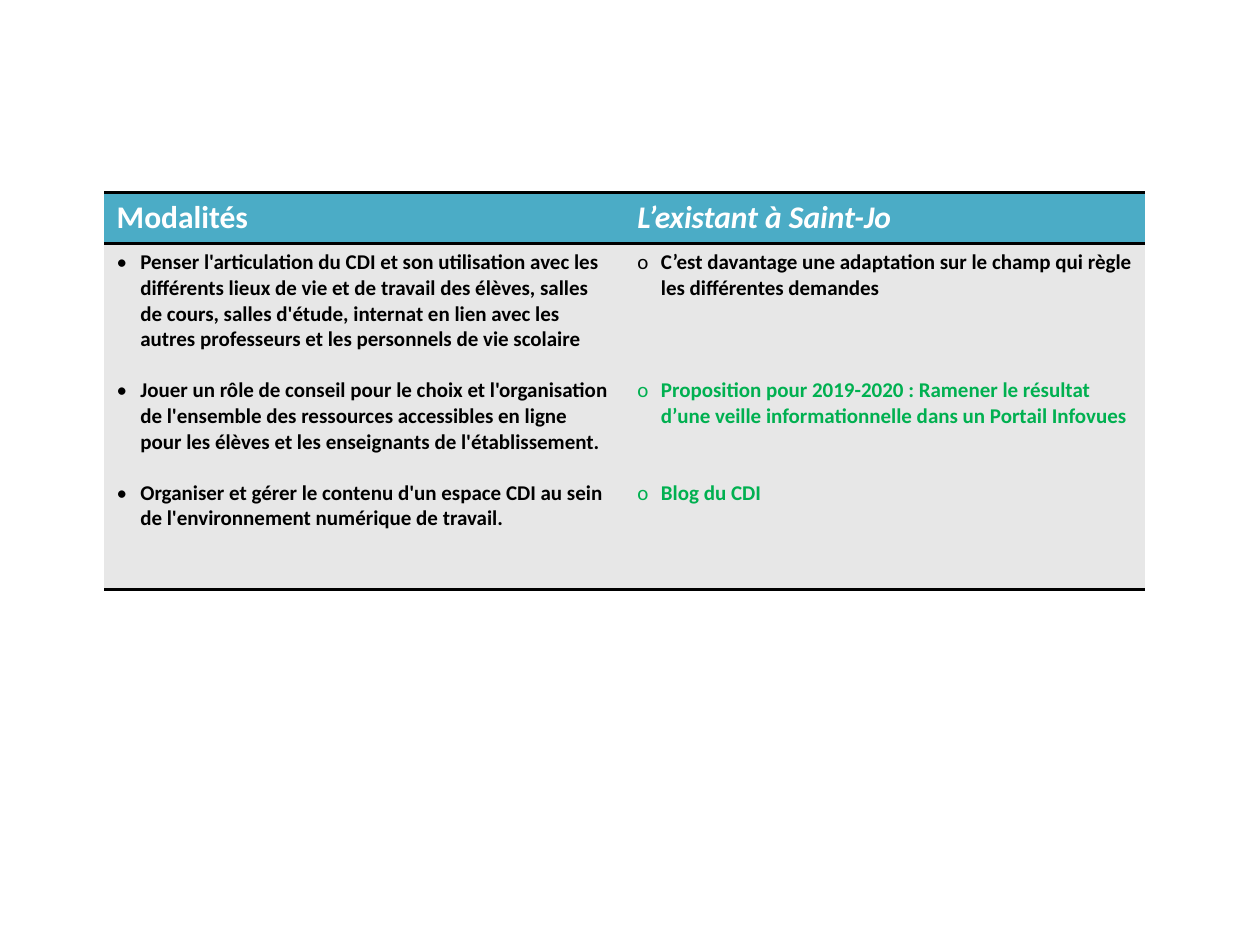
"""Build a one-slide comparison table of library practices."""
from dataclasses import dataclass

import lxml.etree
import pptx
import pptx.dml.color
import pptx.oxml
import pptx.oxml.ns
import pptx.util

Pt = pptx.util.Pt
qn = pptx.oxml.ns.qn
BLACK, WHITE, GREEN = "000000", "FFFFFF", "00B050"
TEAL, GREY = "4BACC6", "E7E7E7"
LINE = 14.65
INDENT = 13.5


@dataclass
class Item:
    text: str
    blank_lines: int = 0
    color: str = BLACK


@dataclass
class Column:
    heading: str
    italic: bool
    bullet: str
    items: list[Item]


COLUMNS = [
    Column("Modalités", False, "•", [
        Item("Penser l'articulation du CDI et son utilisation avec les différents "
             "lieux de vie et de travail des élèves, salles de cours, salles d'étude, "
             "internat en lien avec les autres professeurs et les personnels de vie "
             "scolaire"),
        Item("Jouer un rôle de conseil pour le choix et l'organisation de l'ensemble "
             "des ressources accessibles en ligne pour les élèves et les enseignants "
             "de l'établissement.", 1),
        Item("Organiser et gérer le contenu d'un espace CDI au sein de "
             "l'environnement numérique de travail.", 1),
    ]),
    Column("L’existant à Saint-Jo", True, "o", [
        Item("C’est davantage une adaptation sur le champ qui règle les différentes "
             "demandes"),
        Item("Proposition pour 2019-2020 : Ramener le résultat d’une veille "
             "informationnelle dans un Portail Infovues", 3, GREEN),
        Item("Blog du CDI", 2, GREEN),
    ]),
]


def rgb(color: str) -> pptx.dml.color.RGBColor:
    """Turn a hex string into a colour."""
    return pptx.dml.color.RGBColor.from_string(color)


def format_run(p, size: float, color: str, italic: bool = False) -> None:
    """Format the single run of a paragraph."""
    f = p.runs[0].font
    f.name, f.size, f.bold, f.italic = "Calibri", Pt(size), True, italic
    f.color.rgb = rgb(color)


def style_cell(cell, fill: str) -> None:
    """Fill a cell and rule its top and bottom edges only."""
    cell.fill.solid()
    cell.fill.fore_color.rgb = rgb(fill)
    tc_pr = cell._tc.get_or_add_tcPr()
    for i, side in enumerate(("lnL", "lnR", "lnT", "lnB")):
        ln = lxml.etree.Element(qn(f"a:{side}"))
        if side in ("lnT", "lnB"):
            ln.set("w", str(Pt(2)))
            solid = lxml.etree.SubElement(ln, qn("a:solidFill"))
            lxml.etree.SubElement(solid, qn("a:srgbClr"), val=BLACK)
        else:
            lxml.etree.SubElement(ln, qn("a:noFill"))
        tc_pr.insert(i, ln)


def write_items(tf, column: Column) -> None:
    """Write the bulleted items of a column."""
    for i, item in enumerate(column.items):
        p = tf.add_paragraph() if i else tf.paragraphs[0]
        p.text = item.text
        p.space_before = Pt(item.blank_lines * LINE)
        format_run(p, 12, item.color)
        p_pr = p._p.get_or_add_pPr()
        p_pr.set("marL", str(Pt(INDENT)))
        p_pr.set("indent", str(-Pt(INDENT)))
        lxml.etree.SubElement(p_pr, qn("a:buFont"), typeface="Calibri")
        lxml.etree.SubElement(p_pr, qn("a:buChar"), char=column.bullet)


def main() -> None:
    """Create and save the presentation."""
    prs = pptx.Presentation()
    prs.slide_width, prs.slide_height = Pt(720), Pt(540)
    s = prs.slides.add_slide(prs.slide_layouts[6])
    table = s.shapes.add_table(2, 2, Pt(59.5), Pt(110), Pt(595), Pt(226.5)).table
    table.horz_banding = False
    table.rows[0].height, table.rows[1].height = Pt(29), Pt(197.5)
    for i, column in enumerate(COLUMNS):
        head, body = table.cell(0, i), table.cell(1, i)
        style_cell(head, TEAL)
        style_cell(body, GREY)
        head.text_frame.text = column.heading
        format_run(head.text_frame.paragraphs[0], 18, WHITE, column.italic)
        write_items(body.text_frame, column)
    prs.save("out.pptx")


if __name__ == "__main__":
    main()
